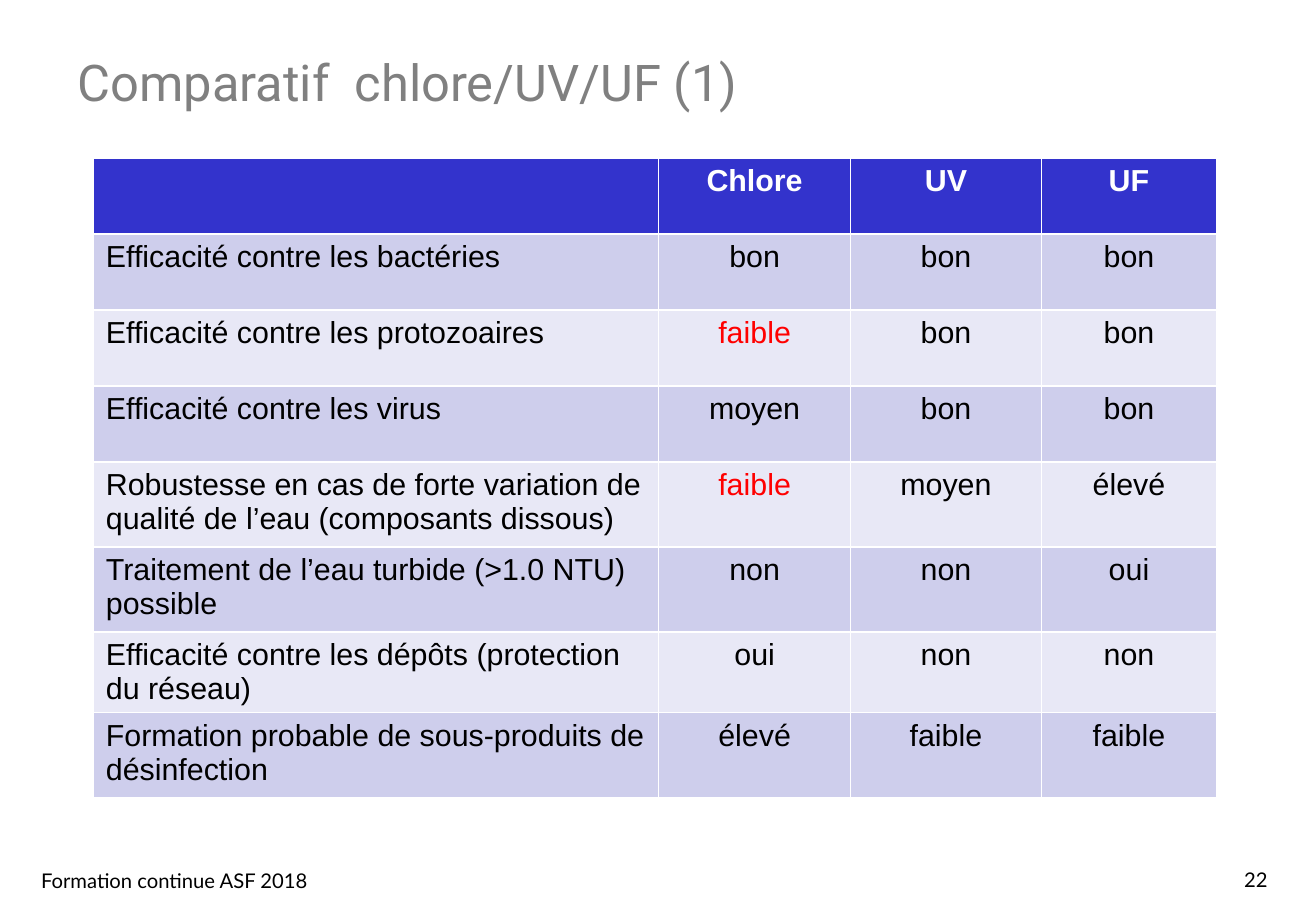
from pptx import Presentation
from pptx.dml.color import RGBColor
from pptx.enum.text import MSO_ANCHOR, MSO_AUTO_SIZE, PP_ALIGN
from pptx.util import Cm, Pt

LEFT, CENTER, RIGHT = PP_ALIGN.LEFT, PP_ALIGN.CENTER, PP_ALIGN.RIGHT
MIDDLE = MSO_ANCHOR.MIDDLE
NO_FIT = MSO_AUTO_SIZE.NONE
TITLE_ONLY = 5

HEADER, BAND_DARK, BAND_LIGHT = "3333CC", "CECEEC", "E8E8F6"
WHITE, BLACK, RED, GREY = "FFFFFF", "000000", "FF0000", "808080"


def rgb(value):
    return RGBColor.from_string(value)


def write(tf, text, font, size, color, align=LEFT, bold=False):
    p = tf.paragraphs[0]
    p.alignment = align
    r = p.add_run()
    r.text = text
    r.font.name = font
    r.font.size = Pt(size)
    r.font.bold = bold
    r.font.color.rgb = rgb(color)


prs = Presentation()
prs.slide_width, prs.slide_height = Cm(27.51), Cm(19.05)
s = prs.slides.add_slide(prs.slide_layouts[TITLE_ONLY])

# Title
title = s.shapes.title
title.left, title.top, title.width, title.height = Cm(1.37), Cm(0.94), Cm(21.34), Cm(1.5)
tf = title.text_frame
tf.auto_size = NO_FIT
tf.vertical_anchor = MIDDLE
write(tf, "Comparatif  chlore/UV/UF (1)", "Roboto", 30, GREY)

# Comparison table
rows = [
    ("", "Chlore", "UV", "UF"),
    ("Efficacité contre les bactéries", "bon", "bon", "bon"),
    ("Efficacité contre les protozoaires", "faible", "bon", "bon"),
    ("Efficacité contre les virus", "moyen", "bon", "bon"),
    ("Robustesse en cas de forte variation de qualité de l’eau (composants dissous)",
     "faible", "moyen", "élevé"),
    ("Traitement de l’eau turbide (>1.0 NTU) possible", "non", "non", "oui"),
    ("Efficacité contre les dépôts (protection du réseau)", "oui", "non", "non"),
    ("Formation probable de sous-produits de désinfection", "élevé", "faible", "faible"),
]
col_widths = [11.81, 4.01, 3.99, 3.66]
row_heights = [1.59, 1.59, 1.59, 1.59, 1.78, 1.78, 1.67, 1.78]

table = s.shapes.add_table(len(rows), len(col_widths), Cm(1.96), Cm(3.3),
                           Cm(sum(col_widths)), Cm(sum(row_heights))).table
for column, width in zip(table.columns, col_widths):
    column.width = Cm(width)
for row, height in zip(table.rows, row_heights):
    row.height = Cm(height)

for i, texts in enumerate(rows):
    is_header = i == 0
    fill = HEADER if is_header else BAND_DARK if i % 2 else BAND_LIGHT
    for j, text in enumerate(texts):
        cell = table.cell(i, j)
        cell.fill.solid()
        cell.fill.fore_color.rgb = rgb(fill)
        if not text:
            continue
        # Weak points of chlorine stand out in red
        is_weak = j == 1 and text == "faible"
        color = WHITE if is_header else RED if is_weak else BLACK
        write(cell.text_frame, text, "Arial", 18, color,
              CENTER if j else LEFT, is_header)

# Footer and slide number
for text, left, top, width, height, align in [
    ("Formation continue ASF 2018", 0.61, 18.03, 7.42, 0.76, LEFT),
    ("22", 21.01, 18.01, 5.74, 0.84, RIGHT),
]:
    sp = s.shapes.add_textbox(Cm(left), Cm(top), Cm(width), Cm(height))
    sp.text_frame.word_wrap = True
    write(sp.text_frame, text, "Lato", 12, BLACK, align)

prs.save("out.pptx")
